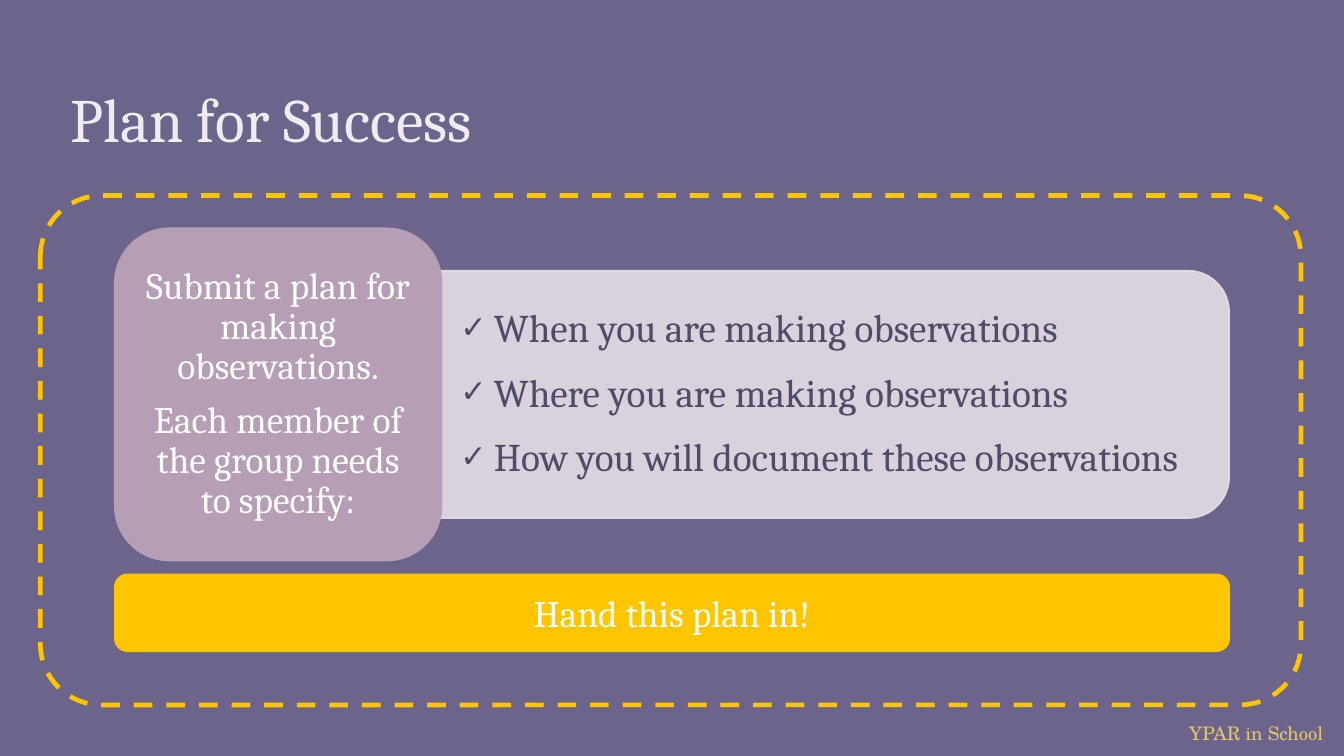
from dataclasses import dataclass
from typing import Optional

from lxml.etree import SubElement
from pptx import Presentation
from pptx.dml.color import RGBColor
from pptx.enum.dml import MSO_LINE
from pptx.enum.shapes import MSO_SHAPE
from pptx.enum.text import MSO_ANCHOR, MSO_AUTO_SIZE, PP_ALIGN
from pptx.oxml.ns import qn
from pptx.util import Inches, Pt

COLUMNS, ROWS = 100, 56.25
CELL = Inches(0.1)
PURPLE, GOLD, MAUVE, PALE = "6C648B", "FFC600", "B69EB4", "E5DFE5"
WHITE, INK, TITLE_TINT, FOOTER_GOLD = "FFFFFF", "514B68", "F0EBF0", "E4C469"


@dataclass(frozen=True)
class Area:
    column: float
    row: float
    columns: float
    rows: float

    def turned(self) -> "Area":
        shift = (self.columns - self.rows) / 2
        return Area(self.column + shift, self.row - shift, self.rows, self.columns)

    def lengths(self) -> list[int]:
        return [round(n * CELL) for n in (self.column, self.row, self.columns, self.rows)]


@dataclass(frozen=True)
class TextStyle:
    size: float
    color: str
    font: str = "Cambria"
    align: PP_ALIGN = PP_ALIGN.LEFT
    anchor: MSO_ANCHOR = MSO_ANCHOR.MIDDLE
    line_spacing: float = 1.0
    space_after: float = 0
    insets: tuple[float, float] = (0.1, 0.05)
    bullet: Optional[str] = None
    wrap: bool = True


@dataclass(frozen=True)
class Panel:
    preset: MSO_SHAPE
    area: Area
    fill: Optional[str]
    line: str
    width: float = 1
    opacity: int = 100
    quarter_turn: bool = False
    dashed: bool = False
    corner: Optional[float] = None


def rgb(color: str) -> RGBColor:
    return RGBColor.from_string(color)


def place(shape, area: Area) -> None:
    shape.left, shape.top, shape.width, shape.height = area.lengths()


def set_opacity(fill, percent: int) -> None:
    for tint in fill._xPr.iter(qn("a:srgbClr")):
        if tint.find(qn("a:alpha")) is None:
            SubElement(tint, qn("a:alpha"), val=str(percent * 1000))


def add_bullet(paragraph, mark: str) -> None:
    properties = paragraph._p.get_or_add_pPr()
    properties.set("marL", str(Inches(0.3)))
    properties.set("indent", str(-Inches(0.25)))
    SubElement(properties, qn("a:buSzPct"), val="80000")
    SubElement(properties, qn("a:buChar"), char=mark)


def write(shape, lines: list[str], style: TextStyle) -> None:
    frame = shape.text_frame
    frame.text = "\n".join(lines)
    frame.word_wrap = style.wrap
    frame.auto_size = MSO_AUTO_SIZE.NONE
    frame.vertical_anchor = style.anchor
    side, edge = (Inches(inset) for inset in style.insets)
    frame.margin_left = frame.margin_right = side
    frame.margin_top = frame.margin_bottom = edge
    for paragraph in frame.paragraphs:
        paragraph.alignment = style.align
        paragraph.line_spacing = style.line_spacing
        paragraph.space_before = Pt(0)
        paragraph.space_after = Pt(style.space_after)
        if style.bullet:
            add_bullet(paragraph, style.bullet)
        for run in paragraph.runs:
            run.font.name = style.font
            run.font.size = Pt(style.size)
            run.font.color.rgb = rgb(style.color)


def draw(slide, panel: Panel):
    area = panel.area.turned() if panel.quarter_turn else panel.area
    shape = slide.shapes.add_shape(panel.preset, *area.lengths())
    shape.shadow.inherit = False
    shape.rotation = 90 if panel.quarter_turn else 0
    if panel.corner is not None:
        shape.adjustments[0] = panel.corner
    if panel.fill:
        shape.fill.solid()
        shape.fill.fore_color.rgb = rgb(panel.fill)
    else:
        shape.fill.background()
    shape.line.color.rgb = rgb(panel.line)
    shape.line.width = Pt(panel.width)
    if panel.dashed:
        shape.line.dash_style = MSO_LINE.DASH
    if panel.opacity < 100:
        set_opacity(shape.fill, panel.opacity)
        set_opacity(shape.line.fill, panel.opacity)
    return shape


def main() -> None:
    deck = Presentation()
    deck.slide_width, deck.slide_height = round(COLUMNS * CELL), round(ROWS * CELL)
    slide = deck.slides.add_slide(deck.slide_layouts[1])
    slide.background.fill.solid()
    slide.background.fill.fore_color.rgb = rgb(PURPLE)

    footer = slide.shapes.add_textbox(*Area(87.5, 53.2, 12.5, 2.7).lengths())
    write(footer, ["YPAR in School"],
          TextStyle(10, FOOTER_GOLD, "TeX Gyre Schola", anchor=MSO_ANCHOR.TOP, wrap=False))

    title = slide.shapes.title
    place(title, Area(4.25, 5, 91.5, 7.5))
    write(title, ["Plan for Success"],
          TextStyle(33, TITLE_TINT, anchor=MSO_ANCHOR.BOTTOM, insets=(0.1, 0.1)))

    draw(slide, Panel(MSO_SHAPE.ROUND_2_SAME_RECTANGLE, Area(32.85, 20.15, 58.6, 18.4),
                      PALE, PALE, opacity=90, quarter_turn=True))
    checklist = slide.placeholders[1]
    slide.shapes._spTree.append(checklist._element)
    place(checklist, Area(32.85, 21.05, 57.7, 16.6))
    write(checklist,
          ["When you are making observations",
           "Where you are making observations",
           "How you will document these observations"],
          TextStyle(21, INK, line_spacing=0.9, space_after=12, insets=(0.09, 0.04), bullet="✓"))

    task = draw(slide, Panel(MSO_SHAPE.ROUNDED_RECTANGLE, Area(8.55, 17, 24.3, 24.7), MAUVE, MAUVE))
    write(task,
          ["Submit a plan for making observations.",
           "Each member of the group needs to specify:"],
          TextStyle(20, WHITE, align=PP_ALIGN.CENTER, line_spacing=0.9, space_after=7,
                    insets=(0.08, 0.04)))

    reminder = draw(slide, Panel(MSO_SHAPE.ROUNDED_RECTANGLE, Area(8.55, 42.75, 82.9, 5.7), GOLD, GOLD))
    write(reminder, ["Hand this plan in!"], TextStyle(20, WHITE, align=PP_ALIGN.CENTER))

    draw(slide, Panel(MSO_SHAPE.ROUNDED_RECTANGLE, Area(3, 14.55, 93.8, 37.9), None, GOLD,
                      width=2.5, dashed=True, corner=0.12))
    deck.save("out.pptx")


if __name__ == "__main__":
    main()
